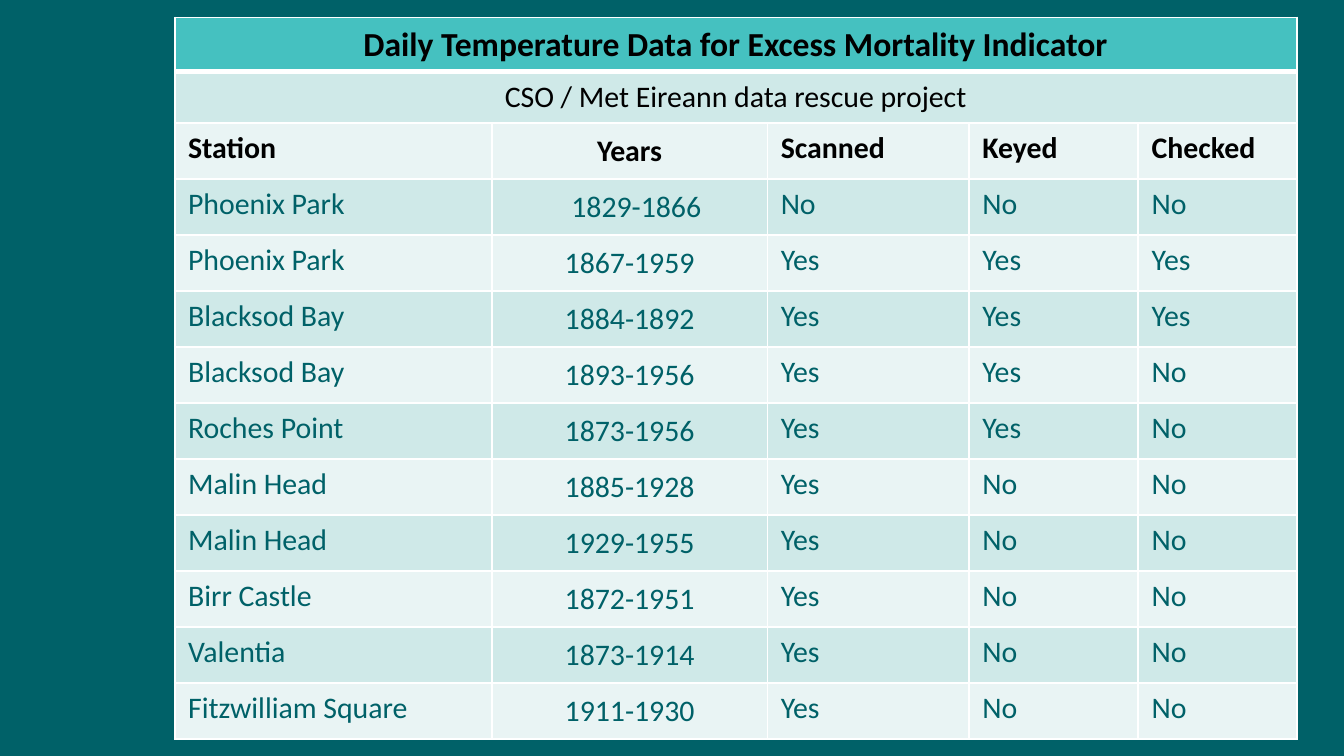
from pptx import Presentation
from pptx.dml.color import RGBColor
from pptx.enum.text import MSO_ANCHOR, PP_ALIGN
from pptx.oxml.ns import qn
from pptx.util import Inches, Pt
from lxml.etree import SubElement

COLOURS = {
    "teal": "006168",
    "title": "45C1C0",
    "dark band": "CFE9E8",
    "light band": "E9F4F4",
    "white": "FFFFFF",
    "black": "000000",
}
FONT = "Calibri"

TITLE = "Daily Temperature Data for Excess Mortality Indicator"
SUBTITLE = "CSO / Met Eireann data rescue project"
HEADINGS = ["Station", "Years", "Scanned", "Keyed", "Checked"]
STATIONS = [
    ["Phoenix Park", "1829-1866", "No", "No", "No"],
    ["Phoenix Park", "1867-1959", "Yes", "Yes", "Yes"],
    ["Blacksod Bay", "1884-1892", "Yes", "Yes", "Yes"],
    ["Blacksod Bay", "1893-1956", "Yes", "Yes", "No"],
    ["Roches Point", "1873-1956", "Yes", "Yes", "No"],
    ["Malin Head", "1885-1928", "Yes", "No", "No"],
    ["Malin Head", "1929-1955", "Yes", "No", "No"],
    ["Birr Castle", "1872-1951", "Yes", "No", "No"],
    ["Valentia", "1873-1914", "Yes", "No", "No"],
    ["Fitzwilliam Square", "1911-1930", "Yes", "No", "No"],
]
COLUMN_WIDTHS = [2.36, 2.05, 1.5, 1.26, 1.18]
ROW_HEIGHTS = [0.38] * 2 + [5 / 12] * (len(STATIONS) + 1)
YEARS_COLUMN = 1


class SlideBuilder:
    """Holds the style and the current slide."""

    def __init__(self, page):
        self.page = page

    def colour(self, name):
        return RGBColor.from_string(COLOURS[name])

    def background(self, name):
        fill = self.page.background.fill
        fill.solid()
        fill.fore_color.rgb = self.colour(name)

    def table(self, left, top, widths, heights):
        frame = self.page.shapes.add_table(
            len(heights), len(widths), Inches(left), Inches(top),
            Inches(sum(widths)), Inches(sum(heights)))
        table = frame.table
        table.first_row = table.horz_banding = False
        for column, width in zip(table.columns, widths):
            column.width = Inches(width)
        for row, height in zip(table.rows, heights):
            row.height = Inches(height)
        return table

    def cell_frame(self, cell, fill, top=1, bottom=1):
        """Draw white borders (widths in points) and the fill."""
        properties = cell._tc.get_or_add_tcPr()
        for side, width in (("L", 1), ("R", 1), ("T", top), ("B", bottom)):
            line = SubElement(properties, qn(f"a:ln{side}"), w=str(Pt(width)))
            solid = SubElement(line, qn("a:solidFill"))
            SubElement(solid, qn("a:srgbClr"), val=COLOURS["white"])
        cell.fill.solid()
        cell.fill.fore_color.rgb = self.colour(fill)

    def cell_text(self, cell, text, colour, size=16, bold=False, centred=False):
        para = cell.text_frame.paragraphs[0]
        para.text = text
        para.alignment = PP_ALIGN.CENTER if centred else PP_ALIGN.LEFT
        para.font.name = FONT
        para.font.size = Pt(size)
        para.font.bold = bold
        para.font.color.rgb = self.colour(colour)


def main():
    # Widescreen page, 16 to 9
    deck = Presentation()
    deck.slide_width = Inches(10)
    deck.slide_height = Inches(10 * 9 / 16)
    builder = SlideBuilder(deck.slides.add_slide(deck.slide_layouts[6]))
    builder.background("teal")
    table = builder.table(1.3, 0.13, COLUMN_WIDTHS, ROW_HEIGHTS)

    # Borders and alternating bands, with a thick rule under the title
    for row in range(len(ROW_HEIGHTS)):
        band = "dark band" if row % 2 else "light band"
        for column in range(len(COLUMN_WIDTHS)):
            builder.cell_frame(table.cell(row, column),
                               band if row else "title",
                               top=3 if row == 1 else 1,
                               bottom=3 if row == 0 else 1)

    # Title and subtitle across all columns
    for row in range(2):
        table.cell(row, 0).merge(table.cell(row, len(COLUMN_WIDTHS) - 1))
    builder.cell_text(table.cell(0, 0), TITLE, "black", 18, True, True)
    builder.cell_text(table.cell(1, 0), SUBTITLE, "black", centred=True)

    # Headings and stations
    for row, values in enumerate([HEADINGS] + STATIONS, start=2):
        heading = row == 2
        for column, value in enumerate(values):
            cell = table.cell(row, column)
            years = column == YEARS_COLUMN
            builder.cell_text(cell, value, "black" if heading else "teal",
                              bold=heading, centred=years)
            if years:
                cell.vertical_anchor = MSO_ANCHOR.MIDDLE

    # The first period sits slightly right of centre
    table.cell(3, YEARS_COLUMN).margin_left = Inches(0.2)

    deck.save("out.pptx")


if __name__ == "__main__":
    main()
